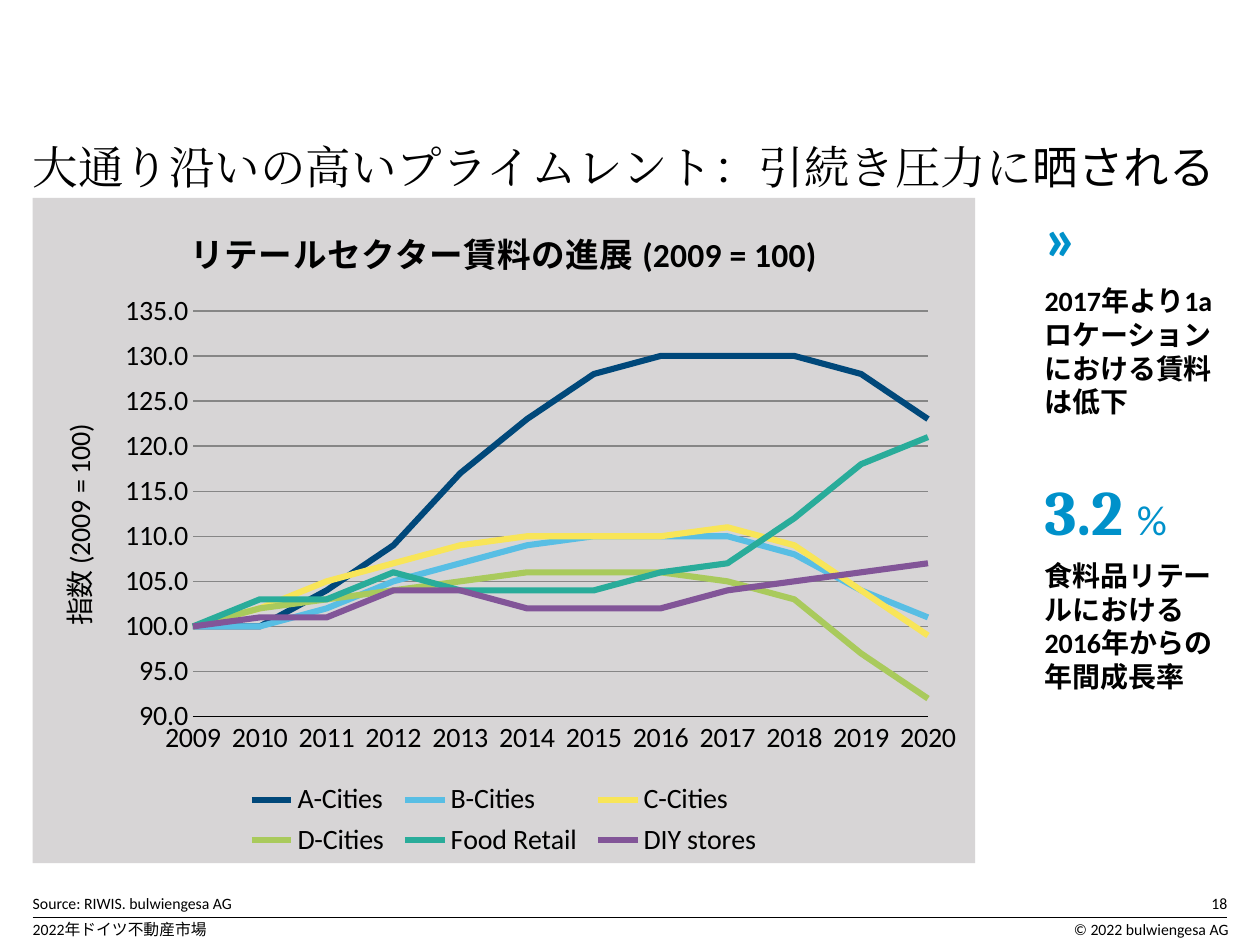
from dataclasses import dataclass

import pptx
import pptx.chart.data
import pptx.dml.color
import pptx.enum.chart
import pptx.enum.shapes
import pptx.enum.text
import pptx.oxml
import pptx.oxml.ns
import pptx.util
from pptx.util import Inches

COLORS = {
    "text": "000000", "accent": "0091CA", "panel": "D7D5D6", "grid": "868686",
    "A-Cities": "00487A", "B-Cities": "58BEE4", "C-Cities": "F8E558",
    "D-Cities": "A9CA5C", "Food Retail": "29AC9A", "DIY stores": "825598",
}
EAST_ASIAN_FONT = "Noto Sans CJK JP"
LEFT_EDGE, RIGHT_EDGE = 0.26, 9.74
YEARS = [str(year) for year in range(2009, 2021)]
RENTS = {
    "A-Cities": [100, 100, 104, 109, 117, 123, 128, 130, 130, 130, 128, 123],
    "B-Cities": [100, 100, 102, 105, 107, 109, 110, 110, 110, 108, 104, 101],
    "C-Cities": [100, 102, 105, 107, 109, 110, 110, 110, 111, 109, 104, 99],
    "D-Cities": [100, 102, 103, 104, 105, 106, 106, 106, 105, 103, 97, 92],
    "Food Retail": [100, 103, 103, 106, 104, 104, 104, 106, 107, 112, 118, 121],
    "DIY stores": [100, 101, 101, 104, 104, 102, 102, 102, 104, 105, 106, 107],
}


@dataclass
class Run:
    text: str
    size: float
    font: str = "Calibri"
    color: str = "text"
    bold: bool = False
    east_asian: str = EAST_ASIAN_FONT


@dataclass
class Para:
    runs: list[Run]
    space_before: float = 0
    right: bool = False


@dataclass
class Box:
    left: float
    top: float
    width: float
    height: float
    paras: list[Para]


def rgb(name: str) -> pptx.dml.color.RGBColor:
    return pptx.dml.color.RGBColor.from_string(COLORS[name])


def set_east_asian(font_xml, typeface: str) -> None:
    ea = pptx.oxml.parse_xml(
        f'<a:ea {pptx.oxml.ns.nsdecls("a")} typeface="{typeface}"/>')
    font_xml.find(pptx.oxml.ns.qn("a:latin")).addnext(ea)


def add_run(p, run: Run) -> None:
    r = p.add_run()
    r.text = run.text
    r.font.size = pptx.util.Pt(run.size)
    r.font.name = run.font
    r.font.bold = run.bold
    r.font.color.rgb = rgb(run.color)
    set_east_asian(r._r.get_or_add_rPr(), run.east_asian)


def add_box(s, box: Box) -> None:
    sp = s.shapes.add_textbox(
        Inches(box.left), Inches(box.top), Inches(box.width), Inches(box.height))
    tf = sp.text_frame
    tf.word_wrap = True
    tf.margin_left = tf.margin_right = tf.margin_top = tf.margin_bottom = 0
    for i, para in enumerate(box.paras):
        p = tf.paragraphs[0] if i == 0 else tf.add_paragraph()
        p.space_before = pptx.util.Pt(para.space_before)
        p.line_spacing = pptx.util.Pt(round(para.runs[0].size * 1.2, 1))
        if para.right:
            p.alignment = pptx.enum.text.PP_ALIGN.RIGHT
        for run in para.runs:
            add_run(p, run)


def manual_layout(x: float, y: float, w: float, h: float, inner: bool = False):
    target = '<c:layoutTarget val="inner"/>' if inner else ""
    return pptx.oxml.parse_xml(
        f'<c:layout {pptx.oxml.ns.nsdecls("c")}><c:manualLayout>{target}'
        '<c:xMode val="edge"/><c:yMode val="edge"/>'
        f'<c:x val="{x}"/><c:y val="{y}"/><c:w val="{w}"/><c:h val="{h}"/>'
        "</c:manualLayout></c:layout>")


def drop_layout(element) -> None:
    for layout in element.findall(pptx.oxml.ns.qn("c:layout")):
        element.remove(layout)


def start_lines_on_axis(value_axis) -> None:
    axis_xml = value_axis._element
    tag = pptx.oxml.ns.qn("c:crossBetween")
    for old in axis_xml.findall(tag):
        axis_xml.remove(old)
    axis_xml.find(pptx.oxml.ns.qn("c:crosses")).addnext(pptx.oxml.parse_xml(
        f'<c:crossBetween {pptx.oxml.ns.nsdecls("c")} val="midCat"/>'))


def set_title(owner, run: Run) -> None:
    add_run(owner.text_frame.paragraphs[0], run)


def add_rent_chart(s) -> None:
    data = pptx.chart.data.CategoryChartData(number_format="0")
    data.categories = YEARS
    for name, values in RENTS.items():
        data.add_series(name, values)
    chart = s.shapes.add_chart(
        pptx.enum.chart.XL_CHART_TYPE.LINE, Inches(LEFT_EDGE), Inches(1.57),
        Inches(7.48), Inches(5.28), data).chart
    chart.font.size = pptx.util.Pt(16)
    chart.font.name = "Calibri"
    chart.font.color.rgb = rgb("text")
    set_title(chart.chart_title, Run("リテールセクター賃料の進展 (2009 = 100)", 19.2, bold=True))
    chart.chart_title.include_in_layout = False

    plot = chart.plots[0]
    plot.vary_by_categories = False
    for series in plot.series:
        series.smooth = False
        series.marker.style = pptx.enum.chart.XL_MARKER_STYLE.NONE
        series.format.line.color.rgb = rgb(series.name)
        series.format.line.width = pptx.util.Pt(3.5)

    no_ticks = pptx.enum.chart.XL_TICK_MARK.NONE
    for axis in (chart.category_axis, chart.value_axis):
        axis.major_tick_mark = axis.minor_tick_mark = no_ticks
    years = chart.category_axis
    years.format.line.color.rgb = rgb("text")
    years.format.line.width = pptx.util.Pt(0.75)
    index = chart.value_axis
    index.minimum_scale, index.maximum_scale, index.major_unit = 90, 135, 5
    index.tick_labels.number_format = "0.0"
    index.tick_labels.number_format_is_linked = False
    index.format.line.fill.background()
    index.has_major_gridlines = True
    index.major_gridlines.format.line.color.rgb = rgb("grid")
    index.major_gridlines.format.line.width = pptx.util.Pt(0.75)
    set_title(index.axis_title, Run("指数 (2009 = 100)", 16))
    start_lines_on_axis(index)

    chart.has_legend = True
    chart.legend.position = pptx.enum.chart.XL_LEGEND_POSITION.BOTTOM
    chart.legend.include_in_layout = False
    legend = chart.legend._element
    drop_layout(legend)
    legend.find(pptx.oxml.ns.qn("c:legendPos")).addnext(
        manual_layout(0.22, 0.87, 0.56, 0.13))
    area = chart._chartSpace.chart.plotArea
    drop_layout(area)
    area.insert(0, manual_layout(0.17, 0.17, 0.78, 0.61, inner=True))
    chart._chartSpace.chart.addnext(pptx.oxml.parse_xml(
        f'<c:spPr {pptx.oxml.ns.nsdecls("c", "a")}><a:solidFill>'
        f'<a:srgbClr val="{COLORS["panel"]}"/></a:solidFill>'
        "<a:ln><a:noFill/></a:ln></c:spPr>"))


def add_footer_rule(s) -> None:
    rule = s.shapes.add_connector(
        pptx.enum.shapes.MSO_CONNECTOR.STRAIGHT, Inches(LEFT_EDGE), Inches(7.28),
        Inches(RIGHT_EDGE), Inches(7.28))
    rule.line.color.rgb = rgb("text")
    rule.line.width = pptx.util.Pt(0.4)
    rule._element.spPr.append(
        pptx.oxml.parse_xml(f'<a:effectLst {pptx.oxml.ns.nsdecls("a")}/>'))


BOXES = [
    Box(LEFT_EDGE, 1.1, 9.49, 0.44, [Para([
        Run("大通り沿いの高いプライムレント：引続き圧力に", 26, "Cambria", east_asian="Cambria"),
        Run("晒される", 26, EAST_ASIAN_FONT)])]),
    Box(7.19, 7.3, 2.56, 0.15, [Para([Run("© 2022 bulwiengesa AG", 9)], right=True)]),
    Box(9.15, 7.09, 0.59, 0.15, [Para([Run("18", 9)], right=True)]),
    Box(LEFT_EDGE, 7.09, 7.48, 0.15, [Para([Run("Source: RIWIS. bulwiengesa AG", 9)])]),
    Box(8.29, 1.57, 1.46, 5.28, [
        Para([Run("»", 36, color="accent", bold=True)]),
        Para([Run("2017年より1a ロケーションにおける賃料は低下", 16, bold=True)], 6),
        Para([Run("3.2 ", 36, "Cambria", "accent", True), Run("%", 24, color="accent")], 31),
        Para([Run("食料品リテールにおける2016年からの年間成長率", 16, bold=True)], 6),
    ]),
    Box(LEFT_EDGE, 7.3, 6.69, 0.15, [Para([Run("2022年ドイツ不動産市場", 9)])]),
]


def main() -> None:
    prs = pptx.Presentation()
    prs.slide_width, prs.slide_height = Inches(10), Inches(7.5)
    s = prs.slides.add_slide(prs.slide_layouts[6])
    add_footer_rule(s)
    add_rent_chart(s)
    for box in BOXES:
        add_box(s, box)
    prs.save("out.pptx")


if __name__ == "__main__":
    main()
